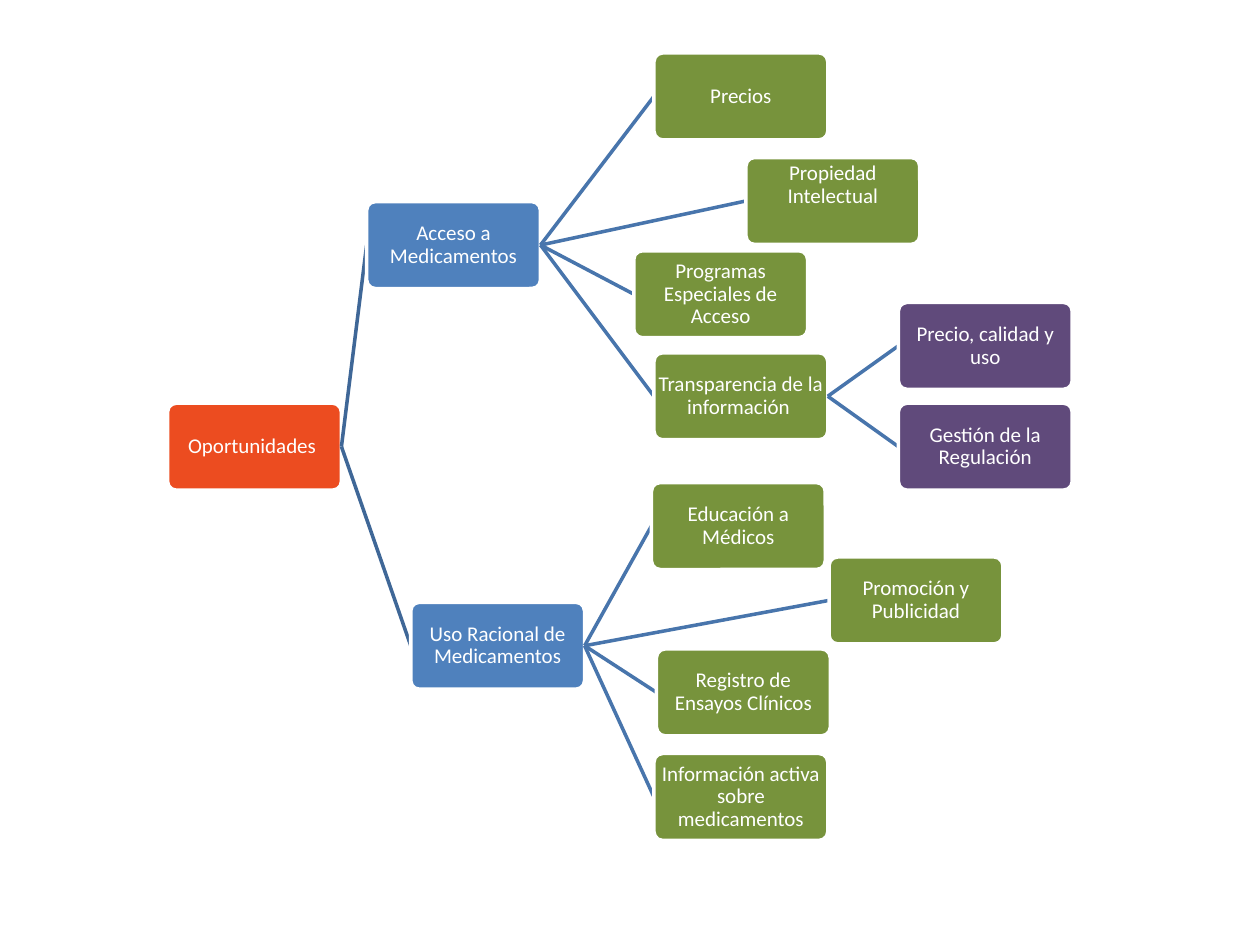
from pptx import Presentation
from pptx.dml.color import RGBColor
from pptx.enum.shapes import MSO_CONNECTOR, MSO_SHAPE
from pptx.enum.text import MSO_ANCHOR, PP_ALIGN
from pptx.oxml.ns import qn
from pptx.util import Inches, Pt
from lxml import etree

ROUNDED = MSO_SHAPE.ROUNDED_RECTANGLE
STRAIGHT = MSO_CONNECTOR.STRAIGHT
MIDDLE = MSO_ANCHOR.MIDDLE
CENTER = PP_ALIGN.CENTER
LEFT_SIDE, RIGHT_SIDE = 1, 3

COLORS = {
    "root": "EC4C20",
    "area": "4F81BD",
    "topic": "77933C",
    "detail": "604A7B",
    "white": "FFFFFF",
    "root_branch": "3F6797",
    "branch": "4875AC",
}
LEVELS = ["root", "area", "topic", "detail"]
NODE_WIDTH, NODE_HEIGHT = 1.38, 0.69
INSET = 0.01
RAISED_INSET = 0.26

# Each node: text, left, top, children
OPPORTUNITIES = ("Oportunidades ", 1.33, 3.2, [
    ("Acceso a Medicamentos", 2.91, 1.6, [
        ("Precios", 5.19, 0.42, []),
        ("Propiedad Intelectual", 5.92, 1.25, []),
        ("Programas Especiales de Acceso", 5.03, 1.99, []),
        ("Transparencia de la información ", 5.19, 2.8, [
            ("Precio, calidad y uso", 7.13, 2.4, []),
            ("Gestión de la Regulación", 7.13, 3.2, []),
        ]),
    ]),
    ("Uso Racional de Medicamentos", 3.26, 4.78, [
        ("Educación a Médicos", 5.17, 3.83, []),
        ("Promoción y Publicidad", 6.58, 4.42, []),
        ("Registro de Ensayos Clínicos", 5.21, 5.15, []),
        ("Información activa sobre medicamentos", 5.19, 5.98, []),
    ]),
])
RAISED_TEXTS = {"Propiedad Intelectual"}


def rgb(name):
    return RGBColor.from_string(COLORS[name])


def add_node(slide, text, left, top, level):
    node = slide.shapes.add_shape(ROUNDED, Inches(left), Inches(top),
                                  Inches(NODE_WIDTH), Inches(NODE_HEIGHT))
    node.adjustments[0] = 0.1
    node.shadow.inherit = False
    node.fill.solid()
    node.fill.fore_color.rgb = rgb(LEVELS[level])
    node.line.color.rgb = rgb("white")
    node.line.width = Pt(2)

    frame = node.text_frame
    frame.word_wrap = True
    frame.vertical_anchor = MIDDLE
    frame.margin_left = frame.margin_right = frame.margin_top = Inches(INSET)
    frame.margin_bottom = Inches(RAISED_INSET if text in RAISED_TEXTS else INSET)
    label = frame.paragraphs[0]
    label.text = text
    label.alignment = CENTER
    label.line_spacing = 0.9
    label.font.name = "Calibri"
    label.font.size = Pt(12)
    label.font.color.rgb = rgb("white")
    return node


def add_branch(slide, parent, left, top, color):
    """Draw the line from the parent to the place where a child will stand."""
    branch = slide.shapes.add_connector(
        STRAIGHT, 0, 0, Inches(left), Inches(top + NODE_HEIGHT / 2))
    branch.begin_connect(parent, RIGHT_SIDE)
    branch.line.color.rgb = rgb(color)
    branch.line.width = Pt(2)
    etree.SubElement(branch._element.spPr, qn("a:effectLst"))
    return branch


def add_tree(slide, tree, level=0, parent=None):
    """Add a node and its descendants, each branch lying below its child."""
    text, left, top, children = tree
    branch = None
    if parent is not None:
        color = "root_branch" if level == 1 else "branch"
        branch = add_branch(slide, parent, left, top, color)
    node = add_node(slide, text, left, top, level)
    if branch is not None:
        branch.end_connect(node, LEFT_SIDE)
    for child in children:
        add_tree(slide, child, level + 1, node)


def main():
    prs = Presentation()
    prs.slide_width, prs.slide_height = Inches(10), Inches(7.5)
    slide = prs.slides.add_slide(prs.slide_layouts[6])
    add_tree(slide, OPPORTUNITIES)
    prs.save("out.pptx")


if __name__ == "__main__":
    main()
